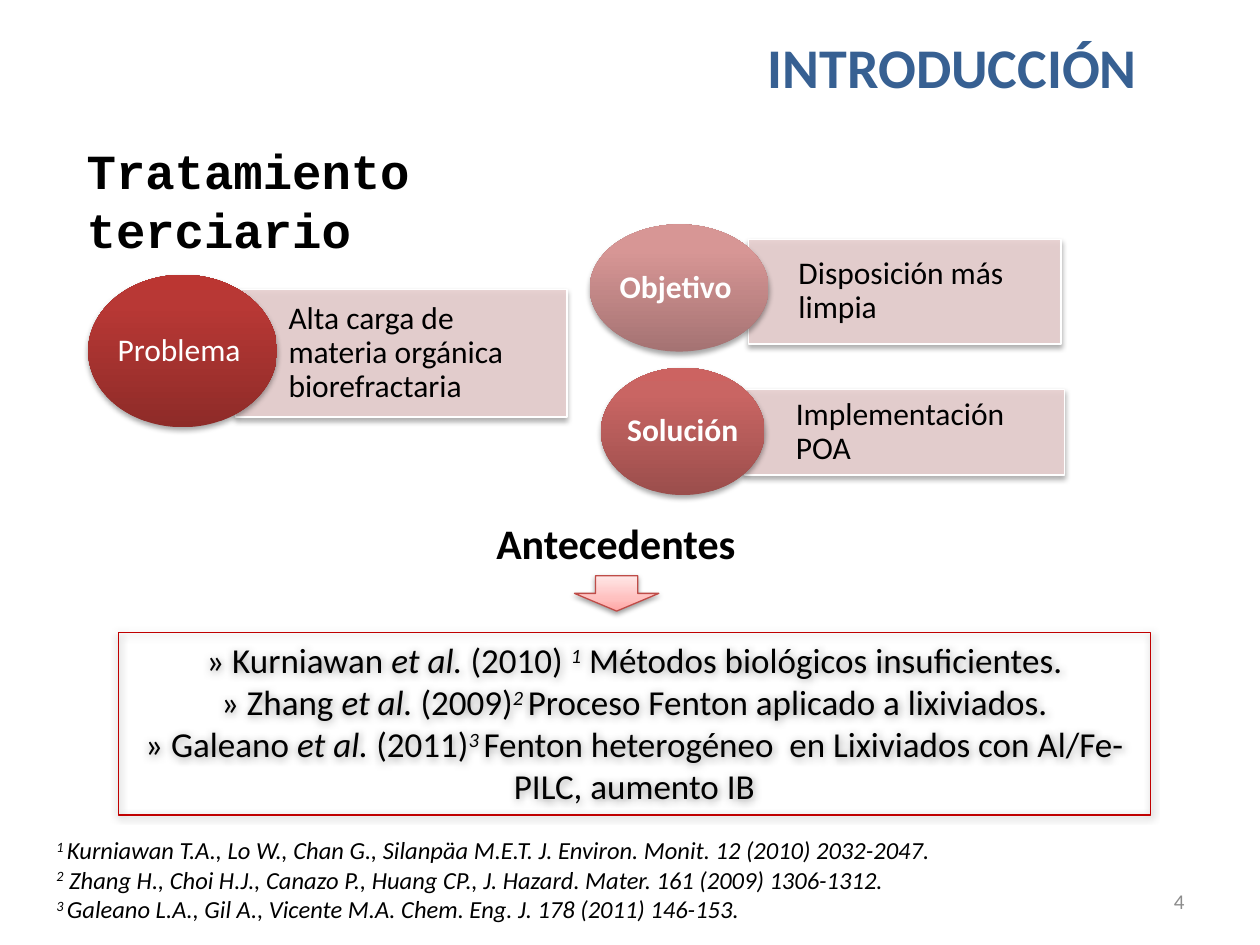
from lxml import etree
from pptx import Presentation
from pptx.dml.color import RGBColor
from pptx.enum.shapes import MSO_SHAPE
from pptx.enum.text import MSO_ANCHOR, PP_ALIGN
from pptx.oxml.ns import qn
from pptx.util import Pt

RECTANGLE, OVAL, DOWN_ARROW = MSO_SHAPE.RECTANGLE, MSO_SHAPE.OVAL, MSO_SHAPE.DOWN_ARROW
TOP, MIDDLE = MSO_ANCHOR.TOP, MSO_ANCHOR.MIDDLE
LEFT, CENTER, RIGHT, JUSTIFY = PP_ALIGN.LEFT, PP_ALIGN.CENTER, PP_ALIGN.RIGHT, PP_ALIGN.JUSTIFY

BLACK = RGBColor(0x00, 0x00, 0x00)
WHITE = RGBColor(0xFF, 0xFF, 0xFF)
BLUE = RGBColor(0x37, 0x60, 0x92)
GRAY = RGBColor(0x8C, 0x8C, 0x8C)
PINK = RGBColor(0xE8, 0xD0, 0xD0)
RED = RGBColor(0xC0, 0x00, 0x00)
ARROW_RED = RGBColor(0xBF, 0x4C, 0x48)


def gradient(*stops):
    return [(position, RGBColor.from_string(color)) for position, color in stops]


PROBLEM_RED = gradient((0, "8E2B28"), (80, "B83835"), (100, "BB3632"))
GOAL_PINK = gradient((0, "A57373"), (80, "D79695"), (100, "D99594"))
SOLUTION_RED = gradient((0, "9B4E4C"), (80, "C96563"), (100, "CC6361"))
ARROW_PINK = gradient((0, "FFA6A5"), (35, "FFC0BF"), (100, "FFE7E7"))

NODES = [
    ("Problema ", "Alta carga de materia orgánica biorefractaria", False, PROBLEM_RED,
     (50.4, 157, 273.6, 87.1), 108, (84.2, 8.6, 72.7)),
    ("Solución", "Implementación POA", True, SOLUTION_RED,
     (343.4, 210.2, 265, 72.7), 93.6, (82.1, 12.2, 49)),
    ("Objetivo ", "Disposición más limpia", True, GOAL_PINK,
     (337, 128.2, 269.3, 72.7), 102.2, (90.7, 8.6, 59.8)),
]

STUDIES = [
    [("» Kurniawan ", ""), ("et al.", "i"), (" (2010) ", ""), ("1", "is"),
     (" Métodos biológicos insuficientes.", "")],
    [("» Zhang ", ""), ("et al. ", "i"), ("(2009)", ""), ("2 ", "is"),
     ("Proceso Fenton aplicado a lixiviados.", "")],
    [("» Galeano ", ""), ("et al. ", "i"), ("(2011)", ""), ("3 ", "is"),
     ("Fenton heterogéneo  en Lixiviados con Al/Fe-PILC, aumento IB", "")],
]

REFERENCES = [
    [("1 ", "is"),
     ("Kurniawan T.A., Lo W., Chan G., Silanpäa M.E.T. J. Environ. Monit. 12 (2010) 2032-2047.", "i")],
    [("2", "is"),
     (" Zhang H., Choi H.J., Canazo P., Huang CP., J. Hazard. Mater. 161 (2009) 1306-1312.", "i")],
    [("3 ", "is"),
     ("Galeano L.A., Gil A., Vicente M.A. Chem. Eng. J. 178 (2011) 146-153. ", "i")],
]


def write(holder, lines, size, color=BLACK, bold=False, align=LEFT, anchor=TOP,
          font="Calibri", spacing=None, wrap=True):
    frame = holder.text_frame
    frame.word_wrap = wrap
    frame.vertical_anchor = anchor
    for index, line in enumerate(lines):
        paragraph = frame.add_paragraph() if index else frame.paragraphs[0]
        paragraph.alignment = align
        if spacing:
            paragraph.line_spacing = spacing
        for text, style in line:
            run = paragraph.add_run()
            run.text = text
            run.font.name = font
            run.font.size = Pt(size)
            run.font.bold = bold
            run.font.italic = "i" in style
            run.font.color.rgb = color
            if "s" in style:
                run.font._element.set("baseline", "30000")


def set_margins(holder, left, top, right, bottom):
    frame = holder.text_frame
    frame.margin_left, frame.margin_top = Pt(left), Pt(top)
    frame.margin_right, frame.margin_bottom = Pt(right), Pt(bottom)


def add_label(slide, box, text, size, **style):
    label = slide.shapes.add_textbox(*map(Pt, box))
    write(label, [[(text, "")]], size, **style)


def set_alpha(color_element, percent):
    etree.SubElement(color_element, qn("a:alpha"), val=str(percent * 1000))


def add_shadow(shape, opacity, blur, distance, angle):
    shape.shadow.inherit = False
    effects = shape._element.spPr.find(qn("a:effectLst"))
    shadow = etree.SubElement(
        effects, qn("a:outerShdw"), blurRad=str(Pt(blur)), dist=str(Pt(distance)),
        dir=str(angle * 60000), rotWithShape="0")
    set_alpha(etree.SubElement(shadow, qn("a:srgbClr"), val="000000"), opacity)


def fill_gradient(shape, stops):
    shape.fill.gradient()
    shape.fill.gradient_angle = 90
    stop_list = shape._element.spPr.find(qn("a:gradFill")).find(qn("a:gsLst"))
    for old_stop in list(stop_list):
        stop_list.remove(old_stop)
    for position, color in stops:
        stop = etree.SubElement(stop_list, qn("a:gs"), pos=str(position * 1000))
        etree.SubElement(stop, qn("a:srgbClr"), val=str(color))


def add_outlined(slide, kind, box, line_color):
    shape = slide.shapes.add_shape(kind, *map(Pt, box))
    shape.line.color.rgb = line_color
    shape.line.width = Pt(0.75)
    return shape


def add_node(slide, name, detail, bold, stops, box, oval_width, card_place):
    left, top, width, height = box
    card_left, card_top, card_height = card_place
    card_width = width - card_left
    card = add_outlined(slide, RECTANGLE,
                        (left + card_left, top + card_top, card_width, card_height), WHITE)
    card.fill.solid()
    card.fill.fore_color.rgb = PINK
    set_alpha(card._element.spPr.find(qn("a:solidFill"))[0], 90)
    add_shadow(card, 35, 3.1, 1.8, 90)
    set_margins(card, card_width * 0.16, 10, 10, 10)
    write(card, [[(detail, "")]], 18, anchor=MIDDLE, spacing=0.9)

    oval = slide.shapes.add_shape(OVAL, *map(Pt, (left, top, oval_width, height)))
    fill_gradient(oval, stops)
    oval.line.fill.background()
    add_shadow(oval, 35, 3.1, 1.8, 90)
    set_margins(oval, 0, 0, 0, 0)
    write(oval, [[(name, "")]], 18, WHITE, bold, CENTER, MIDDLE, spacing=0.9)


def add_background(slide, box):
    left, top, width, height = box
    studies = add_outlined(slide, RECTANGLE, (left, top + 69.1, width, height - 69.1), RED)
    studies.fill.background()
    add_shadow(studies, 40, 5, 0, 0)
    write(studies, STUDIES, 20, align=CENTER, anchor=TOP)
    add_label(slide, (left + 208.8, top, 152.6, 36), "Antecedentes", 24, bold=True, wrap=False)
    arrow = add_outlined(slide, DOWN_ARROW, (left + 260.6, top + 36.7, 48.2, 20.2), ARROW_RED)
    fill_gradient(arrow, ARROW_PINK)
    add_shadow(arrow, 38, 3.1, 1.6, 90)


def add_references(slide, box):
    references = slide.shapes.add_textbox(*map(Pt, box))
    write(references, REFERENCES, 14, align=JUSTIFY)


def main():
    deck = Presentation()
    deck.slide_width, deck.slide_height = Pt(720), Pt(540)
    slide = deck.slides.add_slide(deck.slide_layouts[6])
    add_label(slide, (411.1, 15.1, 266.4, 46.1), "INTRODUCCIÓN", 32,
              color=BLUE, bold=True, align=CENTER)
    add_label(slide, (42.5, 77, 277.9, 41), "Tratamiento terciario", 28,
              bold=True, font="Courier New")
    add_label(slide, (516.2, 500.4, 167.8, 28.8), "4", 12,
              color=GRAY, align=RIGHT, anchor=MIDDLE)
    for node in NODES:
        add_node(slide, *node)
    add_background(slide, (67.7, 292.3, 589.7, 173.5))
    add_references(slide, (25.2, 473.8, 629.3, 58.3))
    deck.save("out.pptx")


if __name__ == "__main__":
    main()
